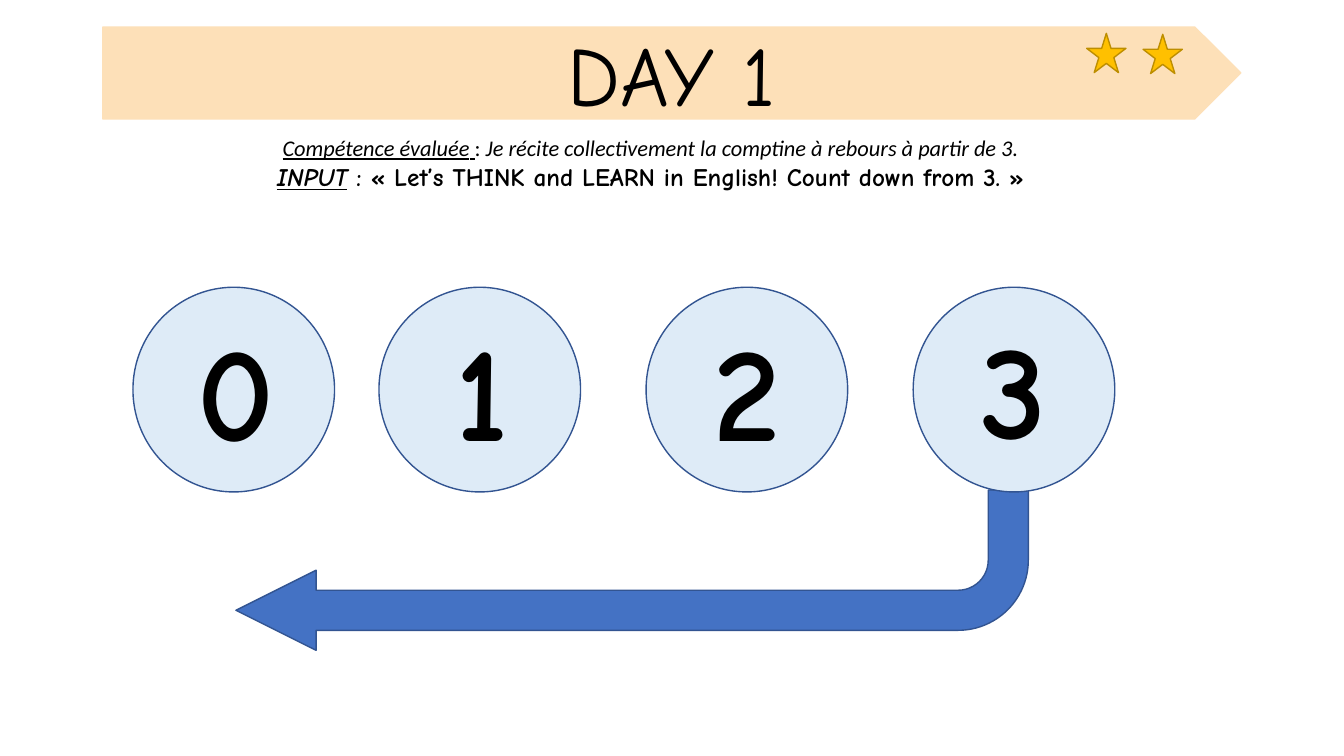
import pptx
import pptx.util
import pptx.dml.color
import pptx.enum.shapes
import pptx.enum.text

Pt = pptx.util.Pt
RGBColor = pptx.dml.color.RGBColor
MSO_SHAPE = pptx.enum.shapes.MSO_SHAPE

BLACK = RGBColor(0x00, 0x00, 0x00)
BLUE = RGBColor(0x44, 0x72, 0xC4)
DARK_BLUE = RGBColor(0x32, 0x54, 0x91)
PALE_BLUE = RGBColor(0xDE, 0xEB, 0xF7)
PEACH = RGBColor(0xFD, 0xE0, 0xB8)
GOLD = RGBColor(0xFF, 0xC0, 0x00)
DARK_GOLD = RGBColor(0xBD, 0x8E, 0x00)

prs = pptx.Presentation()
prs.slide_width = Pt(960)
prs.slide_height = Pt(540)
s = prs.slides.add_slide(prs.slide_layouts[6])


def add_shape(kind, left, top, width, height, fill, line):
    sp = s.shapes.add_shape(kind, Pt(left), Pt(top), Pt(width), Pt(height))
    sp.shadow.inherit = False
    sp.fill.solid()
    sp.fill.fore_color.rgb = fill
    sp.line.color.rgb = line
    sp.line.width = Pt(1)
    return sp


def add_text(left, top, width, height, paragraphs):
    tf = s.shapes.add_textbox(Pt(left), Pt(top), Pt(width), Pt(height)).text_frame
    tf.word_wrap = True
    tf.auto_size = pptx.enum.text.MSO_AUTO_SIZE.SHAPE_TO_FIT_TEXT
    for i, runs in enumerate(paragraphs):
        p = tf.paragraphs[0] if i == 0 else tf.add_paragraph()
        p.alignment = pptx.enum.text.PP_ALIGN.CENTER
        for text, size, font, style in runs:
            r = p.add_run()
            r.text = text
            r.font.size = Pt(size)
            r.font.name = font
            r.font.color.rgb = BLACK
            r.font.bold = "b" in style
            r.font.italic = "i" in style
            r.font.underline = "u" in style


arrow = add_shape(MSO_SHAPE.BENT_ARROW, 168.5, 350, 566, 114.5, BLUE, DARK_BLUE)
arrow.rotation = 180
for i, value in enumerate((0.25, 0.25, 0.5, 0.438)):
    arrow.adjustments[i] = value

for number, left, text_left, text_top in (
    ("0", 95, 128.2, 216),
    ("1", 270.7, 303.8, 216),
    ("2", 461.5, 493.2, 216),
    ("3", 652.3, 684, 214.6),
):
    add_shape(MSO_SHAPE.OVAL, left, 205.2, 144, 146.2, PALE_BLUE, DARK_BLUE)
    add_text(text_left, text_top, 80.6, 123.8, [[(number, 96, "Comic Neue", "b")]])

add_shape(MSO_SHAPE.PENTAGON, 73.4, 19.4, 812.9, 65.5, PEACH, PEACH)
add_text(209.5, 12.2, 540.7, 79.9, [[("DAY 1", 60, "Comic Neue", "")]])
for left, top in ((776.2, 23.8), (816.5, 24.5)):
    add_shape(MSO_SHAPE.STAR_5_POINT, left, top, 28.1, 28.1, GOLD, DARK_GOLD)

add_text(73.4, 92.2, 782.6, 48.2, [
    [
        ("Compétence évaluée", 16, "Calibri", "iu"),
        (" ", 16, "Calibri", "u"),
        (": ", 16, "Calibri", ""),
        ("Je récite collectivement la comptine à rebours à partir de 3.", 16, "Calibri", "i"),
    ],
    [
        ("INPUT", 18, "Comic Neue", "biu"),
        (" : « Let’s THINK and LEARN in English! Count down from 3. »", 18, "Comic Neue", "b"),
    ],
])

prs.save("out.pptx")
